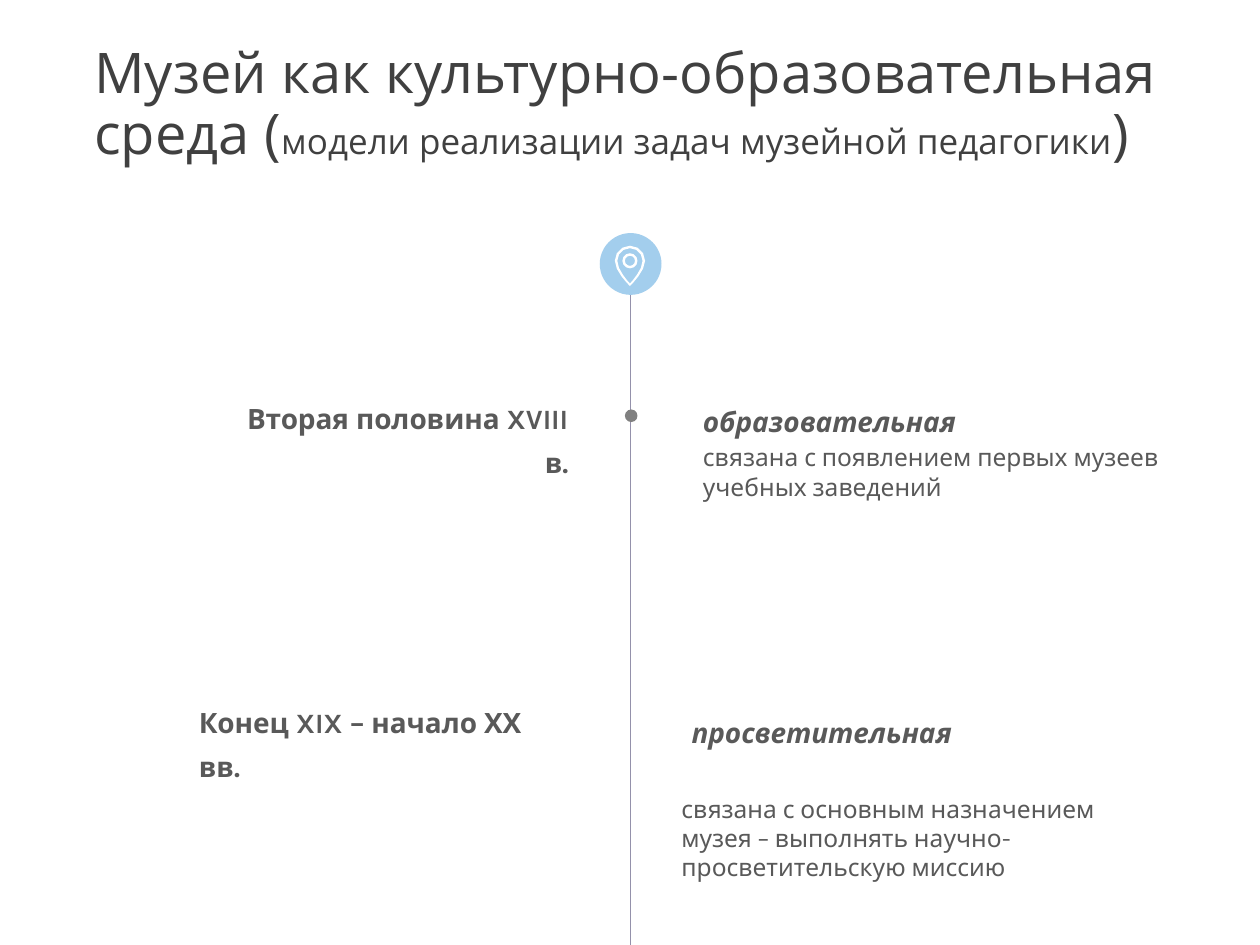
"""Build a museum pedagogy timeline slide."""
import math

import lxml.etree
import pptx
import pptx.dml.color
import pptx.enum.shapes
import pptx.enum.text
import pptx.oxml.ns
import pptx.util

Inches = pptx.util.Inches
RGBColor = pptx.dml.color.RGBColor
Align = pptx.enum.text.PP_ALIGN
Anchor = pptx.enum.text.MSO_ANCHOR

WHITE = RGBColor(0xFF, 0xFF, 0xFF)
TITLE_GRAY = RGBColor(0x40, 0x40, 0x40)
TEXT_GRAY = RGBColor(0x59, 0x59, 0x59)
DOT_GRAY = RGBColor(0x80, 0x80, 0x80)
LINE_GRAY = RGBColor(0x94, 0x91, 0xAB)
SKY_BLUE = RGBColor(0xA3, 0xCE, 0xED)

AXIS = 5
PIN_CENTER = 2.07
TITLE = {"name": "Open Sans", "size": 32}
DETAIL = {"name": "Karla", "size": 14}
PERIOD = {"name": "Karla", "size": 16, "bold": True}
MODEL = {**PERIOD, "italic": True}


def add_text(page, place, runs, color, spacing=1.0, align=Align.LEFT, anchor=Anchor.TOP):
    """Add a wrapped one-paragraph box from pairs of text and font format."""
    box = page.shapes.add_textbox(*map(Inches, place))
    frame = box.text_frame
    frame.word_wrap = True
    frame.vertical_anchor = anchor
    para = frame.paragraphs[0]
    para.alignment = align
    para.line_spacing = spacing
    for text, font_format in runs:
        span = para.add_run()
        span.text = text
        span.font.color.rgb = color
        for key, value in font_format.items():
            setattr(span.font, key, pptx.util.Pt(value) if key == "size" else value)


def paint(shape, color):
    """Give a shape a plain fill without line or shadow."""
    shape.shadow.inherit = False
    shape.fill.solid()
    shape.fill.fore_color.rgb = color
    shape.line.fill.background()


def add_circle(page, left, top, diameter, color):
    """Add a filled circle."""
    circle = page.shapes.add_shape(
        pptx.enum.shapes.MSO_SHAPE.OVAL, *map(Inches, (left, top, diameter, diameter)))
    paint(circle, color)


def add_axis(page, top, bottom):
    """Add the vertical timeline line."""
    axis = page.shapes.add_connector(
        pptx.enum.shapes.MSO_CONNECTOR.STRAIGHT,
        *map(Inches, (AXIS, top, AXIS, bottom)))
    axis.line.color.rgb = LINE_GRAY
    axis.line.width = pptx.util.Pt(0.5)
    lxml.etree.SubElement(axis.element.spPr, pptx.oxml.ns.qn("a:effectLst"))


def arc(radius, degrees):
    """Return points of an arc around the pin centre, starting at its left."""
    angles = [math.radians(180 + angle) for angle in range(0, degrees + 1, 30)]
    return [(AXIS + radius * math.cos(a), PIN_CENTER + radius * math.sin(a)) for a in angles]


def drop(radius, tip):
    """Return points of a drop with a round top and a pointed tip."""
    depth = tip - PIN_CENTER
    side = []
    for t in (0.25, 0.5, 0.75, 1):
        rest = 1 - t
        x = radius * (rest ** 3 + 3 * rest ** 2 * t + 0.5 * rest * t ** 2)
        y = depth * (1.2 * rest ** 2 * t + 2.7 * rest * t ** 2 + t ** 3)
        side.append((x, PIN_CENTER + y))
    right = [(AXIS + x, y) for x, y in side]
    left = [(AXIS - x, y) for x, y in reversed(side[:-1])]
    return arc(radius, 180) + right + left


def add_pin(page):
    """Add the outlined map pin with a ring inside."""
    contours = [drop(0.12, 2.27), drop(0.1, 2.25), arc(0.06, 360), arc(0.04, 360)]
    contours = [[(Inches(x), Inches(y)) for x, y in contour] for contour in contours]
    builder = page.shapes.build_freeform(*contours[0][0])
    for index, contour in enumerate(contours):
        if index:
            builder.move_to(*contour[0])
        builder.add_line_segments(contour[1:], close=True)
    paint(builder.convert_to_shape(), WHITE)


def main():
    """Build and save the slide."""
    deck = pptx.Presentation()
    deck.slide_width, deck.slide_height = Inches(10), Inches(7.5)
    page = deck.slides.add_slide(deck.slide_layouts[6])

    add_text(page, (0.65, 0.13, 8.66, 1.24), [
        ("Музей как культурно-образовательная среда (", TITLE),
        ("модели реализации задач музейной педагогики", {**TITLE, "size": 20}),
        (")", TITLE),
    ], TITLE_GRAY, spacing=0.9, anchor=Anchor.BOTTOM)

    add_axis(page, 2.34, 7.5)
    add_circle(page, 4.96, 3.25, 0.1, DOT_GRAY)
    add_circle(page, 4.76, 1.85, 0.49, SKY_BLUE)
    add_pin(page)

    for place, text, font_format, spacing, align in [
        ((1.64, 3.06, 2.97, 0.4), "Вторая половина XVIII в.", PERIOD, 1.3, Align.RIGHT),
        ((5.48, 3.08, 3.44, 0.4), "образовательная", MODEL, 1.3, Align.LEFT),
        ((5.48, 3.46, 3.84, 1.03),
         "связана с появлением первых музеев учебных заведений", DETAIL, 1.0, Align.LEFT),
        ((1.48, 5.47, 3.13, 0.4), "Конец XIX – начало ХХ вв.", PERIOD, 1.3, Align.LEFT),
        ((5.39, 5.55, 3.44, 0.4), "просветительная", MODEL, 1.3, Align.LEFT),
        ((5.31, 6.25, 3.84, 1.03),
         "связана с основным назначением музея – выполнять научно-просветительскую миссию",
         DETAIL, 1.0, Align.LEFT),
    ]:
        add_text(page, place, [(text, font_format)], TEXT_GRAY, spacing, align)

    deck.save("out.pptx")


if __name__ == "__main__":
    main()
